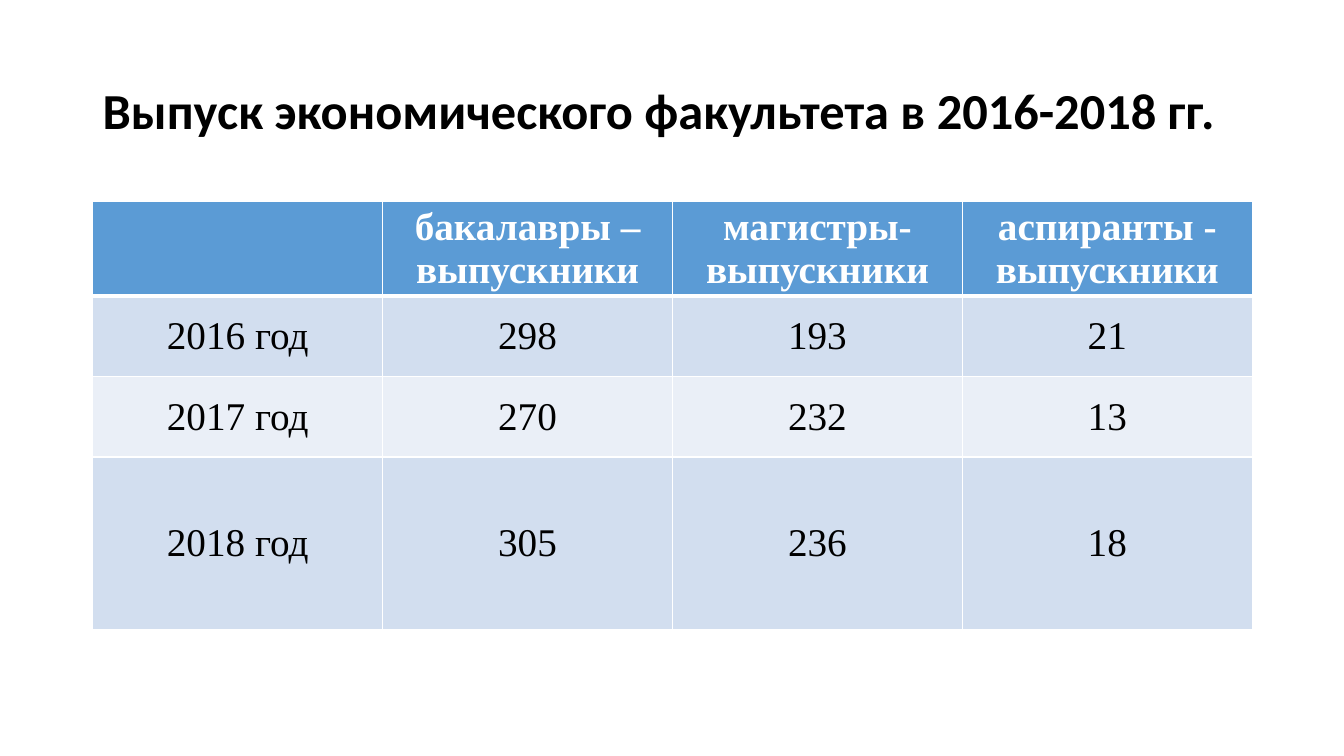
import pptx
import pptx.util
import pptx.dml.color
import pptx.enum.text
import pptx.oxml
import pptx.oxml.ns

TITLE = "Выпуск экономического факультета в 2016-2018 гг."
ROWS = [
    ("", "бакалавры – выпускники", "магистры- выпускники", "аспиранты - выпускники"),
    ("2016 год", "298", "193", "21"),
    ("2017 год", "270", "232", "13"),
    ("2018 год", "305", "236", "18"),
]
HEIGHTS = [0.8, 0.8, 0.8, 1.71]
HEX = {"head": "5B9BD5", "odd": "D2DEEF", "even": "EAEFF7",
       "white": "FFFFFF", "black": "000000"}
WIDE, HIGH = 13.33, 7.5
LEFT, SPAN, TOP = 0.92, 11.5, 2

Inches, Pt = pptx.util.Inches, pptx.util.Pt
MIDDLE = pptx.enum.text.MSO_ANCHOR.MIDDLE
CENTER = pptx.enum.text.PP_ALIGN.CENTER


def color(name):
    return pptx.dml.color.RGBColor.from_string(HEX[name])


def write(para, text, face, size, ink, bold):
    run = para.add_run()
    run.text = text
    run.font.name = face
    run.font.size = Pt(size)
    run.font.bold = bold
    run.font.color.rgb = color(ink)


def border(cell, row):
    """Draw white cell edges, thick between the header and the body."""
    thick = {"B": row == 0, "T": row == 1}
    for spot, side in enumerate("LRTB"):
        width = Pt(3 if thick.get(side) else 1)
        line = pptx.oxml.parse_xml(
            f'<a:ln{side} {pptx.oxml.ns.nsdecls("a")} w="{width}">'
            f'<a:solidFill><a:srgbClr val="{HEX["white"]}"/></a:solidFill></a:ln{side}>')
        cell._tc.get_or_add_tcPr().insert(spot, line)


def fill_cell(cell, text, row):
    head = row == 0
    cell.fill.solid()
    cell.fill.fore_color.rgb = color("head" if head else "odd" if row % 2 else "even")
    cell.vertical_anchor = MIDDLE
    cell.margin_left = cell.margin_right = Inches(0.07)
    cell.margin_top = cell.margin_bottom = 0
    border(cell, row)
    if text:
        para = cell.text_frame.paragraphs[0]
        para.alignment = CENTER
        write(para, text, "Times New Roman", 28, "white" if head else "black", head)


def main():
    deck = pptx.Presentation()
    deck.slide_width, deck.slide_height = Inches(WIDE), Inches(HIGH)
    slide = deck.slides.add_slide(deck.slide_layouts[6])

    box = slide.shapes.add_textbox(Inches(LEFT), Inches(0.4), Inches(SPAN), Inches(1.45))
    frame = box.text_frame
    frame.word_wrap = True
    frame.vertical_anchor = MIDDLE
    frame.paragraphs[0].line_spacing = 0.9
    write(frame.paragraphs[0], TITLE, "Calibri", 36, "black", True)

    table = slide.shapes.add_table(
        len(ROWS), len(ROWS[0]), Inches(LEFT), Inches(TOP),
        Inches(SPAN), Inches(sum(HEIGHTS))).table
    for row, texts in enumerate(ROWS):
        table.rows[row].height = Inches(HEIGHTS[row])
        for col, text in enumerate(texts):
            fill_cell(table.cell(row, col), text, row)

    deck.save("out.pptx")


if __name__ == "__main__":
    main()
